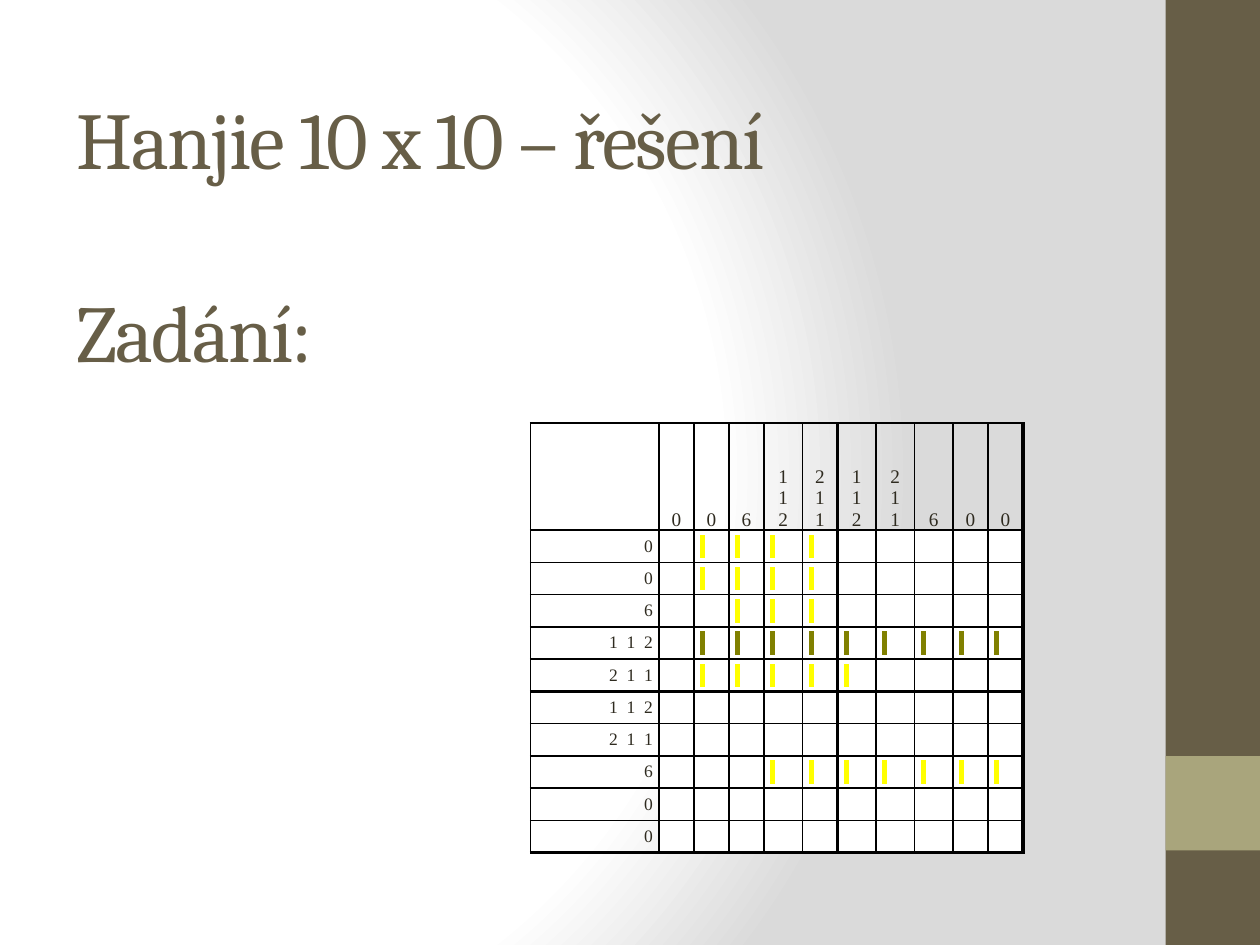
from dataclasses import dataclass

import pptx
import pptx.dml.color
import pptx.enum.shapes
import pptx.enum.text
import pptx.oxml
import pptx.oxml.ns
import pptx.util

Pt = pptx.util.Pt
Align = pptx.enum.text.PP_ALIGN
Anchor = pptx.enum.text.MSO_ANCHOR


@dataclass(frozen=True)
class Theme:
    brown: str = "675E47"
    sand: str = "A9A57C"
    ink: str = "2F2B20"
    white: str = "FFFFFF"
    grey: str = "DADADA"
    black: str = "000000"
    yellow: str = "FFFF00"
    olive: str = "808000"
    serif: str = "Cambria"
    roman: str = "Times New Roman"
    title: float = 46
    head: float = 11
    label: float = 10
    mark: float = 12


@dataclass(frozen=True)
class Band:
    left: float
    top: float
    width: float
    height: float
    color: str


@dataclass(frozen=True)
class Streak:
    """Marked squares of one grid row, from first to last column."""
    row: int
    first: int
    last: int
    color: str


THEME = Theme()
BANDS = [
    Band(666, 0, 54, 540, THEME.brown),
    Band(666, 432, 54, 54, THEME.sand),
]
CLUES = ["0", "0", "6", "112", "211", "112", "211", "6", "0", "0"]
STREAKS = [
    Streak(1, 2, 5, THEME.yellow),
    Streak(2, 2, 5, THEME.yellow),
    Streak(3, 3, 5, THEME.yellow),
    Streak(4, 2, 10, THEME.olive),
    Streak(5, 2, 6, THEME.yellow),
    Streak(8, 4, 10, THEME.yellow),
]
WIDTHS = [73.4, 20, 20, 20, 22, 20, 22, 22, 22, 20, 20]
HEIGHTS = [61.2] + [18.43] * len(CLUES)
THIN, MID, THICK = 1, 1.5, 2.25
BOLD_LINES = (6, 11)
NBSP = "\N{NO-BREAK SPACE}"


def rgb(color: str) -> pptx.dml.color.RGBColor:
    return pptx.dml.color.RGBColor.from_string(color)


def make_xml(body: str):
    """Parse one drawing element, given without its namespace."""
    tag, rest = body.split(" ", 1)
    return pptx.oxml.parse_xml(f"{tag} {pptx.oxml.ns.nsdecls('a')} {rest}")


def style(run, font: str, size: float, color: str) -> None:
    run.font.name = font
    run.font.size = Pt(size)
    run.font.color.rgb = rgb(color)


def paint_back(slide) -> None:
    slide.background.fill.solid()
    back = slide._element.find(".//" + pptx.oxml.ns.qn("p:bgPr"))
    stops = "".join(
        f'<a:gs pos="{pos}000"><a:srgbClr val="{color}"/></a:gs>'
        for pos, color in [(0, THEME.white), (75, THEME.white), (100, THEME.grey)]
    )
    back.replace(back[0], make_xml(
        f'<a:gradFill rotWithShape="1"><a:gsLst>{stops}</a:gsLst><a:path path="circle">'
        '<a:fillToRect l="20000" t="50000" r="100000" b="50000"/></a:path></a:gradFill>'
    ))


def draw_band(slide, band: Band) -> None:
    shape = slide.shapes.add_shape(
        pptx.enum.shapes.MSO_SHAPE.RECTANGLE,
        Pt(band.left), Pt(band.top), Pt(band.width), Pt(band.height))
    shape.shadow.inherit = False
    shape.fill.solid()
    shape.fill.fore_color.rgb = rgb(band.color)
    shape.line.fill.background()


def write_title(slide) -> None:
    title = slide.shapes.title
    title.left, title.top = Pt(36.7), Pt(88.5)
    title.width, title.height = Pt(600), Pt(90)
    frame = title.text_frame
    frame.text = "Hanjie 10 x 10 – řešení\nZadání:"
    frame.word_wrap = True
    frame.auto_size = pptx.enum.text.MSO_AUTO_SIZE.NONE
    frame.vertical_anchor = Anchor.MIDDLE
    for para in frame.paragraphs:
        para.alignment = Align.LEFT
        para.space_before = Pt(0)
        style(para.runs[0], THEME.serif, THEME.title, THEME.brown)
        para.runs[0].font._element.set("spc", "-100")
    frame.paragraphs[1].space_before = Pt(55.4)


def line_width(line: int, cross: int) -> float:
    """Width of a grid line; cross is the row or column it runs through."""
    if line in BOLD_LINES:
        return THICK
    return MID if line == 1 and cross > 0 else THIN


def set_sides(cell, row: int, col: int) -> None:
    sides = {
        "L": line_width(col, row), "R": line_width(col + 1, row),
        "T": line_width(row, col), "B": line_width(row + 1, col),
    }
    props = cell._tc.get_or_add_tcPr()
    for side, width in sides.items():
        props.append(make_xml(
            f'<a:ln{side} w="{Pt(width)}"><a:solidFill><a:srgbClr val="{THEME.black}"/>'
            f'</a:solidFill></a:ln{side}>'))


def fill_text(cell, text: str, size: float, align) -> None:
    cell.text_frame.text = text
    for para in cell.text_frame.paragraphs:
        para.alignment = align
        para._p.get_or_add_endParaRPr().set("sz", str(round(size * 100)))
        for run in para.runs:
            style(run, THEME.roman, size, THEME.ink)


def mark_cell(cell, color: str) -> None:
    fill_text(cell, NBSP, THEME.mark, Align.LEFT)
    props = cell.text_frame.paragraphs[0].runs[0].font._element
    glow = make_xml(f'<a:highlight ><a:srgbClr val="{color}"/></a:highlight>')
    props.find(pptx.oxml.ns.qn("a:latin")).addprevious(glow)


def draw_grid(slide) -> None:
    count = len(WIDTHS)
    table = slide.shapes.add_table(
        count, count, Pt(303.2), Pt(241.8), Pt(sum(WIDTHS)), Pt(sum(HEIGHTS))).table
    table.first_row = table.horz_banding = False
    for column, width in zip(table.columns, WIDTHS):
        column.width = Pt(width)
    for line, height in zip(table.rows, HEIGHTS):
        line.height = Pt(height)
    marks = {(s.row, col): s.color
             for s in STREAKS for col in range(s.first, s.last + 1)}
    for row in range(count):
        for col in range(count):
            cell = table.cell(row, col)
            cell.margin_left = cell.margin_right = Pt(3.6)
            cell.margin_top = cell.margin_bottom = Pt(0)
            cell.vertical_anchor = Anchor.MIDDLE if row else Anchor.BOTTOM
            set_sides(cell, row, col)
            if row and col:
                cell.fill.solid()
                cell.fill.fore_color.rgb = rgb(THEME.white)
            else:
                cell.fill.background()
            if (row, col) in marks:
                mark_cell(cell, marks[row, col])
            elif row and not col:
                fill_text(cell, "  ".join(CLUES[row - 1]), THEME.label, Align.RIGHT)
            elif col and not row:
                fill_text(cell, "\n".join(CLUES[col - 1]), THEME.head, Align.CENTER)
            else:
                fill_text(cell, "", THEME.label, Align.LEFT)


def main() -> None:
    deck = pptx.Presentation()
    deck.slide_width, deck.slide_height = Pt(720), Pt(540)
    slide = deck.slides.add_slide(deck.slide_layouts.get_by_name("Title Only"))
    paint_back(slide)
    for band in BANDS:
        draw_band(slide, band)
    write_title(slide)
    draw_grid(slide)
    deck.save("out.pptx")


if __name__ == "__main__":
    main()
